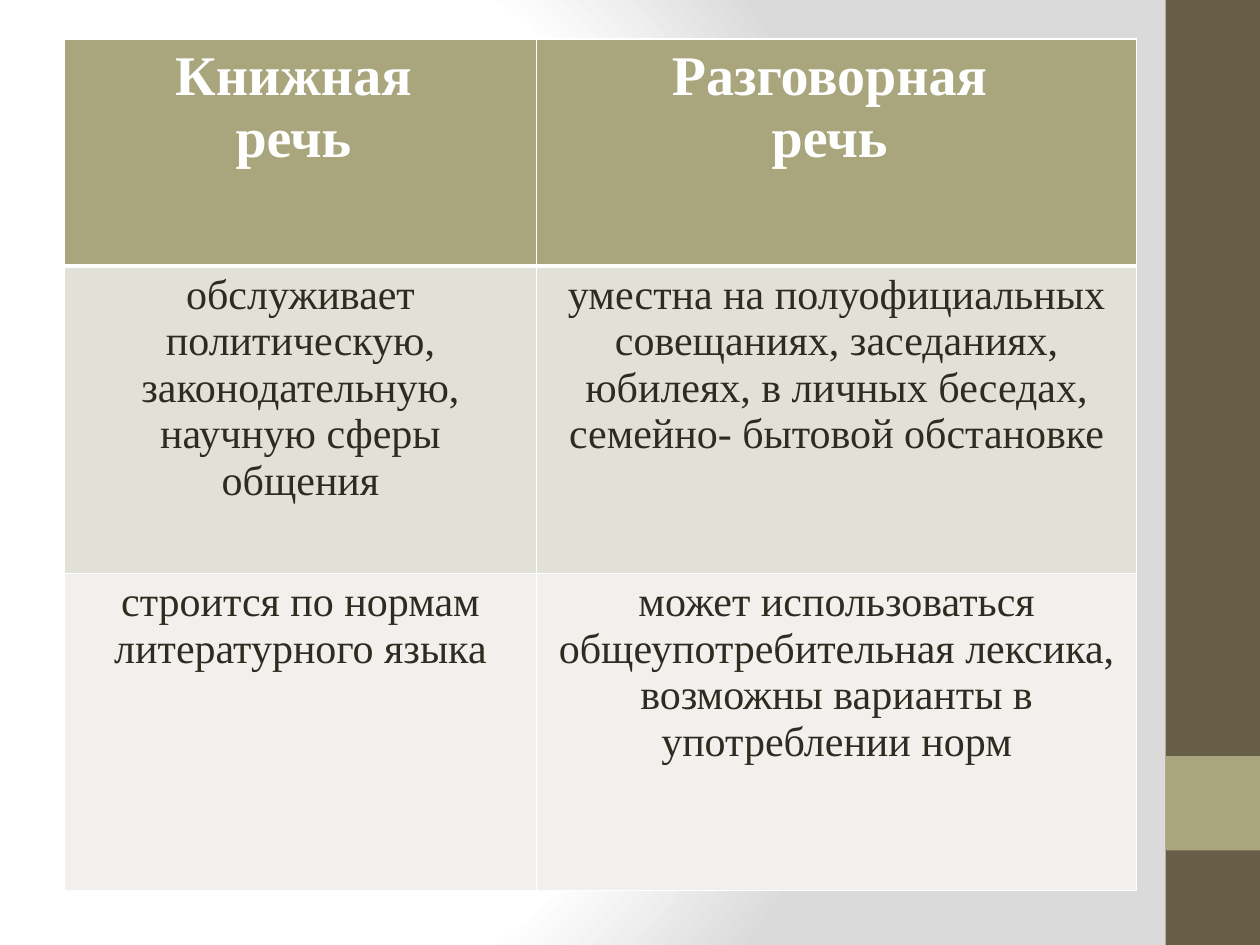
import pptx
import pptx.dml.color
import pptx.enum.shapes
import pptx.enum.text
import pptx.oxml
import pptx.oxml.ns
import pptx.util

Inches = pptx.util.Inches
Pt = pptx.util.Pt
RGBColor = pptx.dml.color.RGBColor

WHITE = RGBColor(0xFF, 0xFF, 0xFF)
GREY = RGBColor(0xDA, 0xDA, 0xDA)
BROWN = RGBColor(0x67, 0x5E, 0x47)
OLIVE = RGBColor(0xA9, 0xA5, 0x7C)
INK = RGBColor(0x2F, 0x2B, 0x20)
BAND_DARK = RGBColor(0xE2, 0xE1, 0xD7)
BAND_LIGHT = RGBColor(0xF1, 0xF0, 0xEC)

HEADER_FONT = {"name": "Times New Roman", "size": Pt(32), "bold": True}
BODY_FONT = {"name": "Times New Roman", "size": Pt(24), "bold": False}

COLUMN_WIDTHS = [3.75, 4.76]
ROWS = [
    # height, fill, text colour, font, lower border in points, cell texts
    (1.8, OLIVE, WHITE, HEADER_FONT, 3,
     ["Книжная \nречь ", "Разговорная \nречь "]),
    (2.44, BAND_DARK, INK, BODY_FONT, 1,
     ["обслуживает политическую, законодательную, научную сферы общения",
      "уместна на полуофициальных совещаниях, заседаниях, юбилеях, "
      "в личных беседах, семейно- бытовой обстановке"]),
    (2.52, BAND_LIGHT, INK, BODY_FONT, 1,
     ["строится по нормам литературного языка",
      "может использоваться общеупотребительная лексика, "
      "возможны варианты в употреблении норм"]),
]


def set_background(slide):
    """Fill the slide with a circular gradient from white to grey."""
    slide.background.fill.gradient()
    gradient = slide.element.find(".//" + pptx.oxml.ns.qn("a:gradFill"))
    stops = "".join(
        f'<a:gs pos="{position * 1000}"><a:srgbClr val="{color}"/></a:gs>'
        for position, color in [(0, WHITE), (75, WHITE), (100, GREY)])
    circle = pptx.oxml.parse_xml(
        f'<a:gradFill {pptx.oxml.ns.nsdecls("a")} rotWithShape="1">'
        f'<a:gsLst>{stops}</a:gsLst><a:path path="circle">'
        '<a:fillToRect l="20000" t="50000" r="100000" b="50000"/>'
        '</a:path></a:gradFill>')
    gradient.getparent().replace(gradient, circle)


def add_sidebar(slide, left, top, width, height):
    """Draw the dark side strip with its square accent."""
    for color, offset, part_height in [(BROWN, 0, height), (OLIVE, 6, width)]:
        shape = slide.shapes.add_shape(
            pptx.enum.shapes.MSO_SHAPE.RECTANGLE, Inches(left),
            Inches(top + offset), Inches(width), Inches(part_height))
        shape.shadow.inherit = False
        shape.fill.solid()
        shape.fill.fore_color.rgb = color
        shape.line.fill.background()


def set_borders(cell, lower, upper):
    """Give a cell white borders; widths are in points."""
    properties = cell._tc.get_or_add_tcPr()
    sides = {"lnL": 1, "lnR": 1, "lnT": upper, "lnB": lower}
    for index, (side, points) in enumerate(sides.items()):
        properties.insert(index, pptx.oxml.parse_xml(
            f'<a:{side} {pptx.oxml.ns.nsdecls("a")} w="{Pt(points)}">'
            f'<a:solidFill><a:srgbClr val="{WHITE}"/></a:solidFill>'
            f'</a:{side}>'))


def fill_cell(cell, text, fill, color, font):
    cell.fill.solid()
    cell.fill.fore_color.rgb = fill
    cell.text = text
    for paragraph in cell.text_frame.paragraphs:
        paragraph.alignment = pptx.enum.text.PP_ALIGN.CENTER
        for run in paragraph.runs:
            for attribute, value in font.items():
                setattr(run.font, attribute, value)
            run.font.color.rgb = color


def add_comparison(slide, left, top, width, height):
    """Add the table that compares the two kinds of speech."""
    table = slide.shapes.add_table(
        len(ROWS), len(COLUMN_WIDTHS), Inches(left), Inches(top),
        Inches(width), Inches(height)).table
    for column, column_width in zip(table.columns, COLUMN_WIDTHS):
        column.width = Inches(column_width)
    upper = 1
    for row, (row_height, fill, color, font, lower, texts) in zip(table.rows, ROWS):
        row.height = Inches(row_height)
        for cell, text in zip(row.cells, texts):
            fill_cell(cell, text, fill, color, font)
            set_borders(cell, lower, upper)
        upper = lower


def main():
    presentation = pptx.Presentation()
    presentation.slide_width = Inches(10)
    presentation.slide_height = Inches(7.5)
    slide = presentation.slides.add_slide(presentation.slide_layouts[6])
    set_background(slide)
    add_sidebar(slide, 9.25, 0, 0.75, 7.5)
    add_comparison(slide, 0.51, 0.31, 8.51, 6.76)
    presentation.save("out.pptx")


if __name__ == "__main__":
    main()
